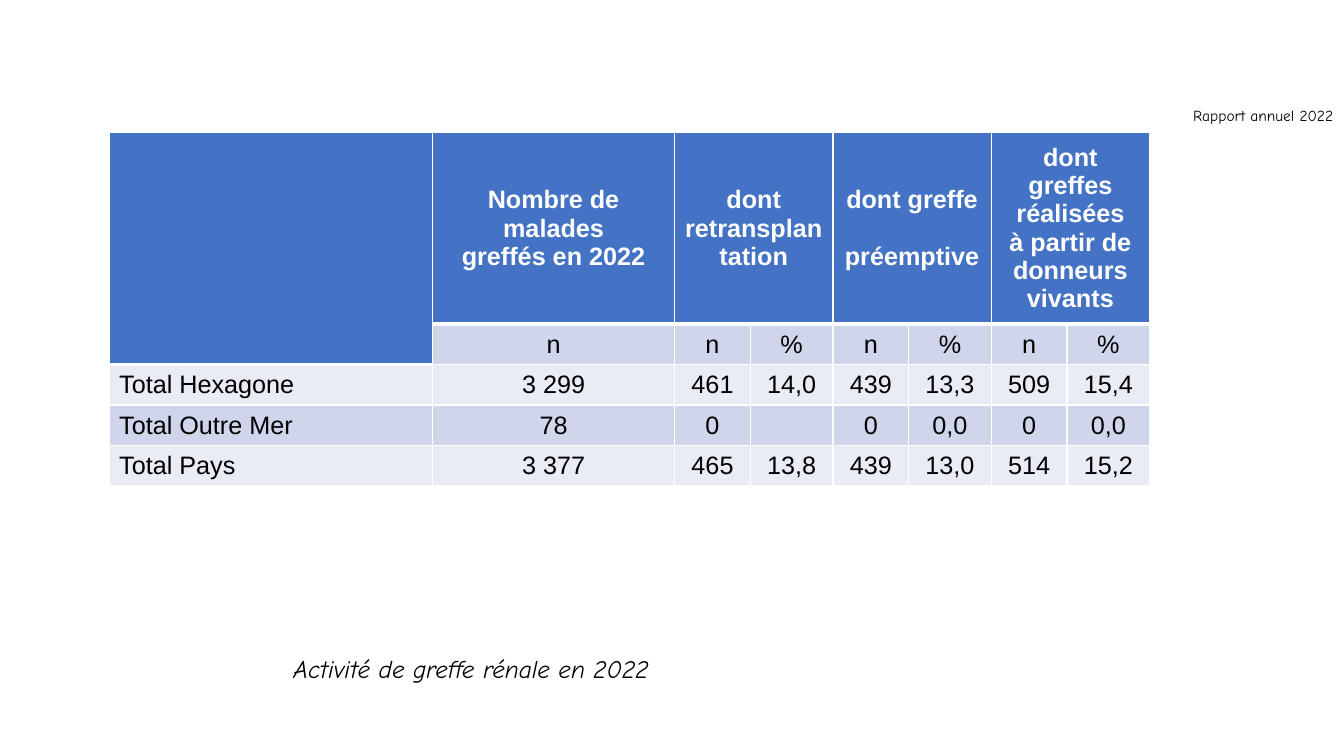
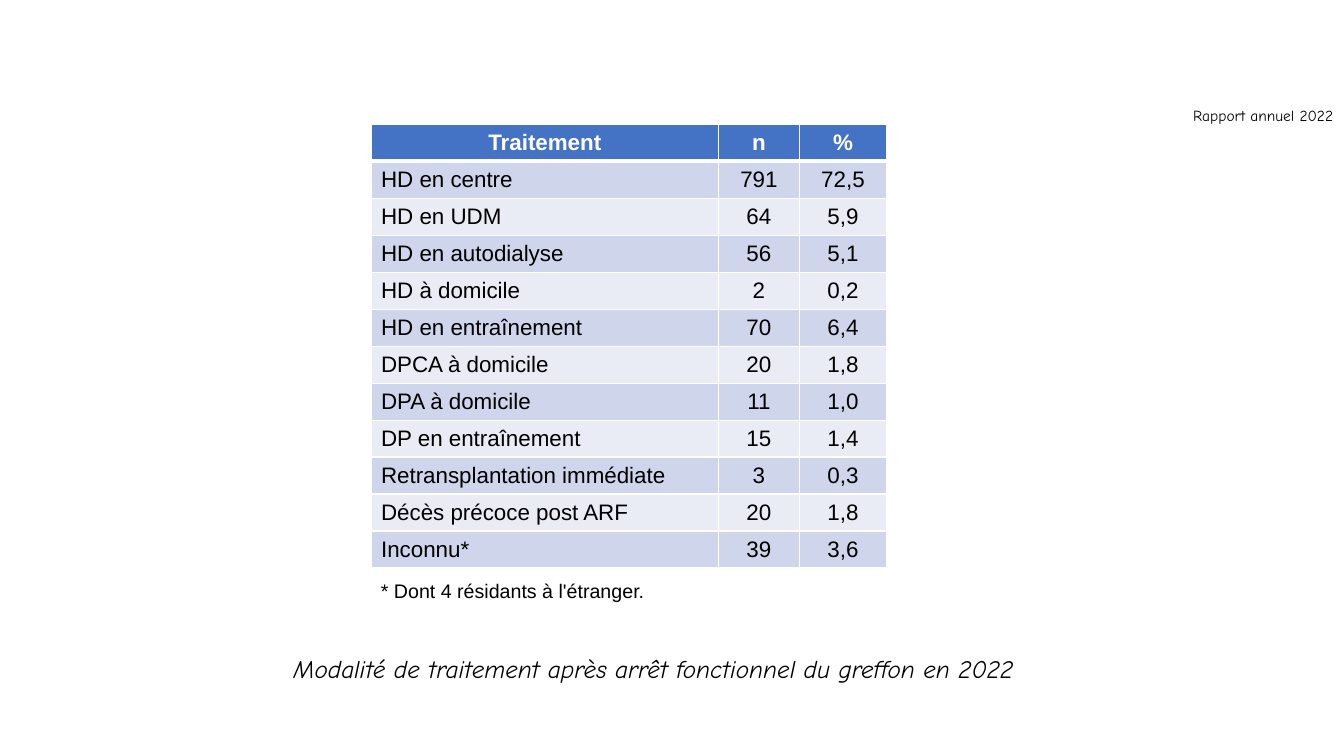
from pptx import Presentation
from pptx.dml.color import RGBColor
from pptx.enum.text import MSO_ANCHOR as Anchor, MSO_AUTO_SIZE as AutoSize, PP_ALIGN as Align
from pptx.oxml import parse_xml
from pptx.oxml.ns import nsdecls
from pptx.util import Cm, Pt

BLUE, BAND_DARK, BAND_LIGHT = "4472C4", "CFD5EA", "E9EBF5"
WHITE, BLACK = "FFFFFF", "000000"
SANS, HAND = "Arial", "Comic Neue"
CAPTION_BOX = (7.14, 16.33, 22.81, 1.02)
REPORT_BOX = (29.82, 2.54, 4.29, 0.74)

TRANSPLANTS = [
    ["", "Nombre de malades\ngreffés en 2022", "dont\nretransplantation", "",
     "dont greffe\npréemptive", "",
     "dont greffes réalisées\nà partir de donneurs\nvivants", ""],
    ["", "n", "n", "%", "n", "%", "n", "%"],
    ["Total Hexagone", "3 299", "461", "14,0", "439", "13,3", "509", "15,4"],
    ["Total Outre Mer", "78", "0", "", "0", "0,0", "0", "0,0"],
    ["Total Pays", "3 377", "465", "13,8", "439", "13,0", "514", "15,2"],
]
TREATMENTS = [
    ["Traitement", "n", "%"],
    ["HD en centre", "791", "72,5"],
    ["HD en UDM", "64", "5,9"],
    ["HD en autodialyse", "56", "5,1"],
    ["HD à domicile", "2", "0,2"],
    ["HD en entraînement", "70", "6,4"],
    ["DPCA à domicile", "20", "1,8"],
    ["DPA à domicile", "11", "1,0"],
    ["DP en entraînement", "15", "1,4"],
    ["Retransplantation immédiate", "3", "0,3"],
    ["Décès précoce post ARF", "20", "1,8"],
    ["Inconnu*", "39", "3,6"],
]


def rgb(color):
    return RGBColor.from_string(color)


def write(tf, text, size=18, font=SANS, color=BLACK, bold=False, italic=False, align=Align.LEFT):
    for i, line in enumerate(text.split("\n")):
        p = tf.paragraphs[0] if i == 0 else tf.add_paragraph()
        p.alignment = align
        r = p.add_run()
        r.text = line
        r.font.name, r.font.size = font, Pt(size)
        r.font.bold, r.font.italic = bold, italic
        r.font.color.rgb = rgb(color)


def add_text(s, box, text, anchor=Anchor.TOP, **fmt):
    tb = s.shapes.add_textbox(*map(Cm, box))
    tf = tb.text_frame
    tf.word_wrap, tf.auto_size = False, AutoSize.SHAPE_TO_FIT_TEXT
    tf.vertical_anchor = anchor
    write(tf, text, **fmt)
    return tb


def add_report_label(s, layout):
    label = add_text(s, REPORT_BOX, "Rapport annuel 2022", size=11, font=HAND)
    layout.shapes.element.append(label.element)


def add_caption(s, text):
    title = s.shapes.title
    title.left, title.top, title.width, title.height = map(Cm, CAPTION_BOX)
    tf = title.text_frame
    tf.word_wrap, tf.auto_size = True, AutoSize.SHAPE_TO_FIT_TEXT
    tf.vertical_anchor = Anchor.TOP
    write(tf, text, font=HAND, italic=True)


def paint_cell(cell, fill, edges):
    cell.fill.solid()
    cell.fill.fore_color.rgb = rgb(fill)
    tcPr = cell._tc.get_or_add_tcPr()
    for i, (side, width) in enumerate(edges.items()):
        tcPr.insert(i, parse_xml(
            f'<a:ln{side} {nsdecls("a")} w="{Pt(width)}"><a:solidFill>'
            f'<a:srgbClr val="{WHITE}"/></a:solidFill></a:ln{side}>'))


def add_grid(s, left, top, col_widths, row_heights, rows, size, merges=()):
    frame = s.shapes.add_table(len(rows), len(col_widths), Cm(left), Cm(top),
                               Cm(sum(col_widths)), Cm(sum(row_heights)))
    table = frame.table
    for col, width in zip(table.columns, col_widths):
        col.width = Cm(width)
    for row, height in zip(table.rows, row_heights):
        row.height = Cm(height)
    for first, last in merges:
        table.cell(*first).merge(table.cell(*last))
    for i, row in enumerate(rows):
        for j, text in enumerate(row):
            cell = table.cell(i, j)
            header = i == 0 or cell.is_spanned
            fill = BLUE if header else BAND_DARK if i % 2 else BAND_LIGHT
            edges = {"L": 1, "R": 1}
            if i == 0:
                edges["T"] = 1
            edges["B"] = 3 if header else 1
            paint_cell(cell, fill, edges)
            cell.vertical_anchor = Anchor.MIDDLE
            if text:
                write(cell.text_frame, text, size=size, bold=header,
                      color=WHITE if header else BLACK,
                      align=Align.CENTER if header or j else Align.LEFT)
    return table


def transplant_slide(s):
    merges = [((0, 0), (1, 0))] + [((0, j), (0, j + 1)) for j in (2, 4, 6)]
    table = add_grid(s, 2.75, 3.34, [8.15, 6.1] + [1.91, 2.08] * 3,
                     [4.8] + [1.02] * 4, TRANSPLANTS, 18, merges)
    table.cell(0, 4).text_frame.paragraphs[1].space_before = Pt(20.7)
    add_caption(s, "Activité de greffe rénale en 2022")


def treatment_slide(s):
    add_caption(s, "Modalité de traitement après arrêt fonctionnel du greffon en 2022")
    add_grid(s, 9.35, 3.13, [8.76, 2.03, 2.21], [0.93] * len(TREATMENTS), TREATMENTS, 16)
    add_text(s, (9.35, 14.45, 7.19, 0.86), "* Dont 4 résidants à l'étranger.",
             anchor=Anchor.BOTTOM, size=14)


def main():
    prs = Presentation()
    prs.slide_width, prs.slide_height = Cm(33.87), Cm(19.05)
    layout = prs.slide_layouts[5]
    slides = [prs.slides.add_slide(layout) for _ in range(2)]
    add_report_label(slides[0], layout)
    for s, build in zip(slides, (transplant_slide, treatment_slide)):
        build(s)
    prs.save("out.pptx")


if __name__ == "__main__":
    main()
